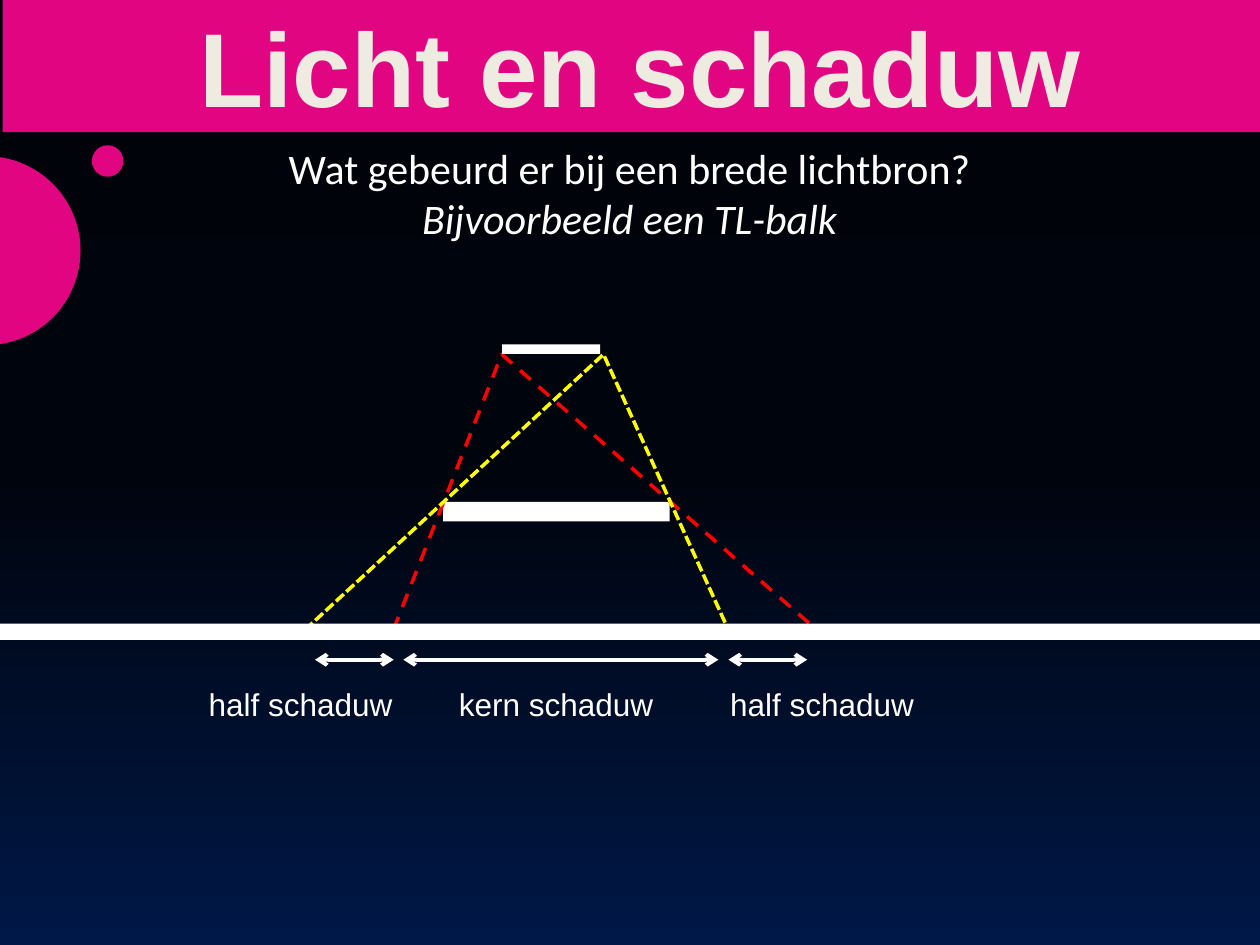
from copy import deepcopy
from dataclasses import dataclass

from pptx import Presentation
from pptx.dml.color import RGBColor
from pptx.enum.dml import MSO_LINE
from pptx.enum.shapes import MSO_CONNECTOR, MSO_SHAPE
from pptx.enum.text import MSO_ANCHOR, PP_ALIGN
from pptx.oxml.ns import qn
from pptx.util import Pt
from lxml.etree import SubElement


@dataclass(frozen=True)
class Theme:
    white: str = "FFFFFF"
    cream: str = "EEECE1"
    pink: str = "E10582"
    red: str = "FF0000"
    yellow: str = "FFFF00"
    sky: tuple = ((0, "00030A"), (0.5, "00040D"), (1, "001847"))
    sans: str = "Arial"
    body: str = "Calibri"
    title: int = 60
    intro: int = 24
    label: int = 18


def color(code):
    return RGBColor.from_string(code)


def write(frame, text, font, size, ink, bold=False, slant=()):
    """Fill a frame with centred lines; slant lists the italic line numbers."""
    frame.word_wrap = True
    frame.text = text
    for row, para in enumerate(frame.paragraphs):
        para.alignment = PP_ALIGN.CENTER
        for run in para.runs:
            run.font.name = font
            run.font.size = Pt(size)
            run.font.bold = bold
            run.font.italic = row in slant
            run.font.color.rgb = color(ink)


class Board:
    def __init__(self, slide, theme):
        self.slide = slide
        self.theme = theme

    def backdrop(self):
        fill = self.slide.background.fill
        fill.gradient()
        fill.gradient_angle = 270
        stops = self.slide.element.find(".//" + qn("a:gsLst"))
        stops.append(deepcopy(stops[-1]))
        for stop, (place, code) in zip(fill.gradient_stops, self.theme.sky):
            stop.position = place
            stop.color.rgb = color(code)

    def shape(self, kind, left, top, width, height):
        shape = self.slide.shapes.add_shape(
            kind, Pt(left), Pt(top), Pt(width), Pt(height))
        shape.shadow.inherit = False
        return shape

    def solid(self, kind, box, code):
        shape = self.shape(kind, *box)
        shape.fill.solid()
        shape.fill.fore_color.rgb = color(code)
        shape.line.fill.background()

    def rays(self, box, apex, code, dash):
        shape = self.shape(MSO_SHAPE.ISOSCELES_TRIANGLE, *box)
        shape.adjustments[0] = apex
        shape.fill.background()
        shape.line.color.rgb = color(code)
        shape.line.width = Pt(2)
        shape.line.dash_style = dash

    def arrow(self, start, end, y):
        line = self.slide.shapes.add_connector(
            MSO_CONNECTOR.STRAIGHT, Pt(start), Pt(y), Pt(end), Pt(y))
        line.line.color.rgb = color(self.theme.white)
        line.line.width = Pt(2.25)
        props = line.element.spPr
        for side in ("a:headEnd", "a:tailEnd"):
            SubElement(props.find(qn("a:ln")), qn(side), type="arrow")
        SubElement(props, qn("a:effectLst"))

    def text(self, text, left, top, width, height, **style):
        box = self.slide.shapes.add_textbox(
            Pt(left), Pt(top), Pt(width), Pt(height))
        write(box.text_frame, text, **style)

    def title(self, text, left, top, width, height, **style):
        shape = self.slide.shapes.title
        shape.left, shape.top = Pt(left), Pt(top)
        shape.width, shape.height = Pt(width), Pt(height)
        shape.text_frame.vertical_anchor = MSO_ANCHOR.MIDDLE
        write(shape.text_frame, text, **style)
        # Bring the title in front of the band
        shape.element.getparent().append(shape.element)


def main():
    deck = Presentation()
    deck.slide_width, deck.slide_height = Pt(720), Pt(540)
    theme = Theme()
    board = Board(deck.slides.add_slide(deck.slide_layouts[5]), theme)
    board.backdrop()

    # Question
    board.text("Wat gebeurd er bij een brede lichtbron?\nBijvoorbeeld een TL-balk",
               19.5, 77.75, 680.5, 65.5, font=theme.body, size=theme.intro,
               ink=theme.white, slant=(1,))

    # Object, rays from both ends of the lamp, wall and lamp
    rect = MSO_SHAPE.RECTANGLE
    board.solid(rect, (253.25, 286.75, 129.5, 11.25), theme.white)
    for left, apex, code, dash in (
            (224.75, 0.256, theme.red, MSO_LINE.DASH),
            (174.25, 0.705, theme.yellow, MSO_LINE.SQUARE_DOT)):
        board.rays((left, 202.5, 242, 157.5), apex, code, dash)
    board.solid(rect, (0, 356.4, 720, 9.2), theme.white)
    board.solid(rect, (287, 196.75, 56, 5.5), theme.white)

    # Shadow zones: arrow ends, label left edge, label
    for start, end, left, name in (
            (180, 225, 90, "half schaduw"),
            (230.5, 410.5, 236, "kern schaduw"),
            (416.25, 461.25, 388, "half schaduw")):
        board.arrow(start, end, 377)
        board.text(name, left, 388, 163.5, 29, font=theme.sans,
                   size=theme.label, ink=theme.white)

    # Pink dots, band and title
    for box in ((52.5, 83, 18, 18), (-62, 89.25, 108, 108)):
        board.solid(MSO_SHAPE.OVAL, box, theme.pink)
    board.solid(rect, (1.5, 0, 718.5, 75.5), theme.pink)
    board.title("Licht en schaduw", 11.5, -2.75, 708.5, 80, font=theme.sans,
                size=theme.title, ink=theme.cream, bold=True)

    deck.save("out.pptx")


if __name__ == "__main__":
    main()
